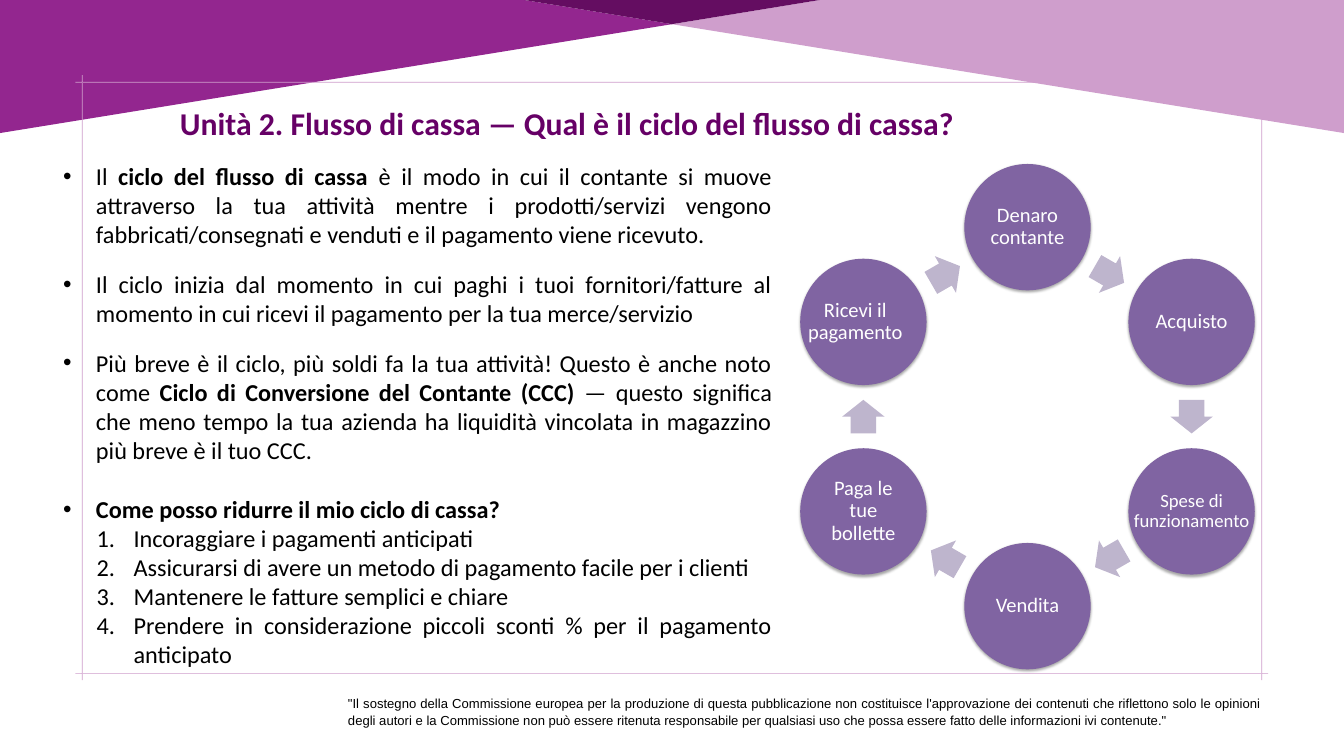
import math
from dataclasses import dataclass

import pptx
import pptx.dml.color
import pptx.enum.shapes
import pptx.enum.text
import pptx.util
from lxml import etree
from pptx.oxml.ns import qn

Inches = pptx.util.Inches
Pt = pptx.util.Pt
Align = pptx.enum.text.PP_ALIGN
Shape = pptx.enum.shapes.MSO_SHAPE


@dataclass(frozen=True)
class Theme:
    purple: str = "93268F"
    lilac: str = "CF9ECC"
    plum: str = "640D61"
    title: str = "660066"
    circle: str = "8064A2"
    arrow: str = "BEB5CD"
    black: str = "000000"
    white: str = "FFFFFF"
    font: str = "Calibri"
    note_font: str = "Arial"
    title_size: int = 34
    body_size: int = 26
    label_size: int = 22
    small_label_size: int = 20
    note_size: int = 14


@dataclass(frozen=True)
class Span:
    text: str
    bold: bool = False


@dataclass(frozen=True)
class Item:
    spans: tuple[Span, ...]
    space_before: int = 0
    numbered: bool = False


@dataclass(frozen=True)
class Step:
    label: str
    size: int = Theme.label_size
    label_width: float = 1.33
    label_shift: float = 0


THEME = Theme()
RING_CENTER = (15.29, 6.2)
RING_RADIUS = 2.82
CIRCLE_SIZE = 1.88
LABEL_HEIGHT = 1.33
ARROW_SIZE = (0.5, 0.63)
FRAME = (1.22, 1.22, 18.77, 10.02)
FRAME_OVERHANG = 0.1
FRAME_WEIGHT = 0.01

TITLE = "Unità 2. Flusso di cassa — Qual è il ciclo del flusso di cassa?"
NOTE = (
    "\"Il sostegno della Commissione europea per la produzione di questa pubblicazione non "
    "costituisce l'approvazione dei contenuti che riflettono solo le opinioni degli autori e la "
    "Commissione non può essere ritenuta responsabile per qualsiasi uso che possa essere fatto "
    "delle informazioni ivi contenute.\""
)
ITEMS = [
    Item((
        Span("Il "),
        Span("ciclo del flusso di cassa", True),
        Span(" è il modo in cui il contante si muove attraverso la tua attività mentre i "
             "prodotti/servizi vengono fabbricati/consegnati e venduti e il pagamento viene ricevuto."),
    )),
    Item((Span("Il ciclo inizia dal momento in cui paghi i tuoi fornitori/fatture al momento in cui "
               "ricevi il pagamento per la tua merce/servizio"),), 22),
    Item((
        Span("Più breve è il ciclo, più soldi fa la tua attività! Questo è anche noto come "),
        Span("Ciclo di Conversione del Contante (CCC) ", True),
        Span("— questo significa che meno tempo la tua azienda ha liquidità vincolata in magazzino "
             "più breve è il tuo CCC."),
    ), 22),
    Item((Span("Come posso ridurre il mio ciclo di cassa?", True),), 32),
    Item((Span("Incoraggiare i pagamenti anticipati"),), numbered=True),
    Item((Span("Assicurarsi di avere un metodo di pagamento facile per i clienti"),), numbered=True),
    Item((Span("Mantenere le fatture semplici e chiare"),), numbered=True),
    Item((Span("Prendere in considerazione piccoli sconti % per il pagamento anticipato"),), numbered=True),
]
STEPS = [
    Step("Denaro contante"),
    Step("Acquisto"),
    Step("Spese di funzionamento", THEME.small_label_size, 2.23),
    Step("Vendita"),
    Step("Paga le tue bollette"),
    Step("Ricevi il pagamento", label_width=1.56, label_shift=-0.12),
]


def rgb(value: str) -> pptx.dml.color.RGBColor:
    return pptx.dml.color.RGBColor.from_string(value)


def style_font(font, size: int, color: str, bold: bool = False, name: str = THEME.font) -> None:
    font.name, font.size, font.bold = name, Pt(size), bold
    font.color.rgb = rgb(color)


def paint(shape, color: str) -> None:
    """Give a shape a flat fill, with no outline and no shadow."""
    shape.fill.solid()
    shape.fill.fore_color.rgb = rgb(color)
    shape.line.fill.background()
    shape.shadow.inherit = False


def add_polygons(shapes, contours: list[list[tuple[float, float]]], color: str) -> None:
    """Draw one filled freeform made of closed contours."""
    outlines = [[(Inches(x), Inches(y)) for x, y in contour] for contour in contours]
    builder = shapes.build_freeform(*outlines[0][0], scale=1.0)
    for index, (start, *rest) in enumerate(outlines):
        if index:
            builder.move_to(*start)
        builder.add_line_segments(rest, close=True)
    paint(builder.convert_to_shape(), color)


def add_frame(shapes) -> None:
    """Draw four hairlines that cross at the corners of the content area."""
    left, top, right, bottom = FRAME
    start_x, end_x = left - FRAME_OVERHANG, right + FRAME_OVERHANG
    start_y, end_y = top - FRAME_OVERHANG, bottom + FRAME_OVERHANG
    bars = [(start_x, y, end_x, y + FRAME_WEIGHT) for y in (top, bottom)]
    bars += [(x, start_y, x + FRAME_WEIGHT, end_y) for x in (left, right)]
    add_polygons(shapes, [[(a, b), (c, b), (c, d), (a, d)] for a, b, c, d in bars], THEME.lilac)


def add_box(shapes, left: float, top: float, width: float, height: float):
    box = shapes.add_textbox(Inches(left), Inches(top), Inches(width), Inches(height))
    box.text_frame.word_wrap = True
    return box


def add_marker(para, numbered: bool) -> None:
    """Set a hanging indent with a bullet or an automatic number."""
    properties = para._p.get_or_add_pPr()
    properties.set("marL", str(Inches(1.06 if numbered else 0.5)))
    properties.set("indent", str(Inches(-0.55 if numbered else -0.49)))
    color = etree.SubElement(properties, qn("a:buClr"))
    etree.SubElement(color, qn("a:srgbClr"), val=THEME.black)
    if numbered:
        etree.SubElement(properties, qn("a:buFont"), typeface=THEME.font)
        etree.SubElement(properties, qn("a:buAutoNum"), type="arabicPeriod")
    else:
        etree.SubElement(properties, qn("a:buFont"), typeface=THEME.note_font)
        etree.SubElement(properties, qn("a:buChar"), char="•")


def add_items(shapes) -> None:
    frame = add_box(shapes, 0.83, 2.35, 10.76, 7.65).text_frame
    for index, item in enumerate(ITEMS):
        para = frame.add_paragraph() if index else frame.paragraphs[0]
        add_marker(para, item.numbered)
        para.level = int(item.numbered)
        para.alignment = Align.JUSTIFY
        para.space_before = Pt(item.space_before)
        for span in item.spans:
            run = para.add_run()
            run.text = span.text
            style_font(run.font, THEME.body_size, THEME.black, span.bold)


def add_soft_shadow(shape) -> None:
    effects = shape._element.spPr.find(qn("a:effectLst"))
    shadow = etree.SubElement(effects, qn("a:outerShdw"), blurRad=str(Pt(3.1)), dist=str(Pt(1.8)),
                              dir="5400000", rotWithShape="0")
    color = etree.SubElement(shadow, qn("a:srgbClr"), val=THEME.black)
    etree.SubElement(color, qn("a:alpha"), val="35000")


def add_centered(shapes, kind, x: float, y: float, width: float, height: float, color: str):
    shape = shapes.add_shape(kind, Inches(x - width / 2), Inches(y - height / 2),
                             Inches(width), Inches(height))
    paint(shape, color)
    return shape


def ring_point(angle: float, radius: float) -> tuple[float, float]:
    turn = math.radians(angle)
    return RING_CENTER[0] + radius * math.cos(turn), RING_CENTER[1] + radius * math.sin(turn)


def add_step(shapes, step: Step, x: float, y: float) -> None:
    circle = add_centered(shapes, Shape.OVAL, x, y, CIRCLE_SIZE, CIRCLE_SIZE, THEME.circle)
    add_soft_shadow(circle)
    frame = add_box(shapes, x + step.label_shift - step.label_width / 2, y - LABEL_HEIGHT / 2,
                    step.label_width, LABEL_HEIGHT).text_frame
    frame.margin_left = frame.margin_right = frame.margin_top = frame.margin_bottom = Inches(0.03)
    frame.vertical_anchor = pptx.enum.text.MSO_ANCHOR.MIDDLE
    frame.text = step.label
    para = frame.paragraphs[0]
    para.alignment, para.line_spacing = Align.CENTER, 0.9
    style_font(para.runs[0].font, step.size, THEME.white)


def add_cycle(page) -> None:
    shapes = page.shapes.add_group_shape().shapes
    turn = 360 / len(STEPS)
    arrow_radius = RING_RADIUS * math.cos(math.radians(turn / 2))
    for index, step in enumerate(STEPS):
        angle = index * turn - 90
        add_step(shapes, step, *ring_point(angle, RING_RADIUS))
        arrow_angle = angle + turn / 2
        arrow = add_centered(shapes, Shape.RIGHT_ARROW, *ring_point(arrow_angle, arrow_radius),
                             *ARROW_SIZE, THEME.arrow)
        arrow.adjustments[0], arrow.adjustments[1] = 0.6, 0.5
        arrow.rotation = arrow_angle + 90


def main() -> None:
    deck = pptx.Presentation()
    deck.slide_width, deck.slide_height = Inches(20), Inches(11.25)
    page = deck.slides.add_slide(deck.slide_layouts[6])
    shapes = page.shapes

    add_polygons(shapes, [[(0, 1.98), (0, 0), (7.8, 0), (10, 0.36)]], THEME.purple)
    add_frame(shapes)
    add_polygons(shapes, [[(20, 1.98), (10, 0.36), (12.2, 0), (20, 0)]], THEME.lilac)
    add_polygons(shapes, [[(10, 0.36), (7.8, 0), (12.2, 0)]], THEME.plum)

    note = add_box(shapes, 5.08, 10.29, 13.79, 0.52)
    note.text_frame.text = NOTE
    para = note.text_frame.paragraphs[0]
    para.alignment, para.line_spacing = Align.JUSTIFY, 1.07
    style_font(para.runs[0].font, THEME.note_size, THEME.black, name=THEME.note_font)

    title = add_box(shapes, 2.58, 1.5, 12.71, 0.67)
    title.text_frame.text = TITLE
    style_font(title.text_frame.paragraphs[0].runs[0].font, THEME.title_size, THEME.title, bold=True)

    add_items(shapes)
    add_cycle(page)
    deck.save("out.pptx")


if __name__ == "__main__":
    main()
